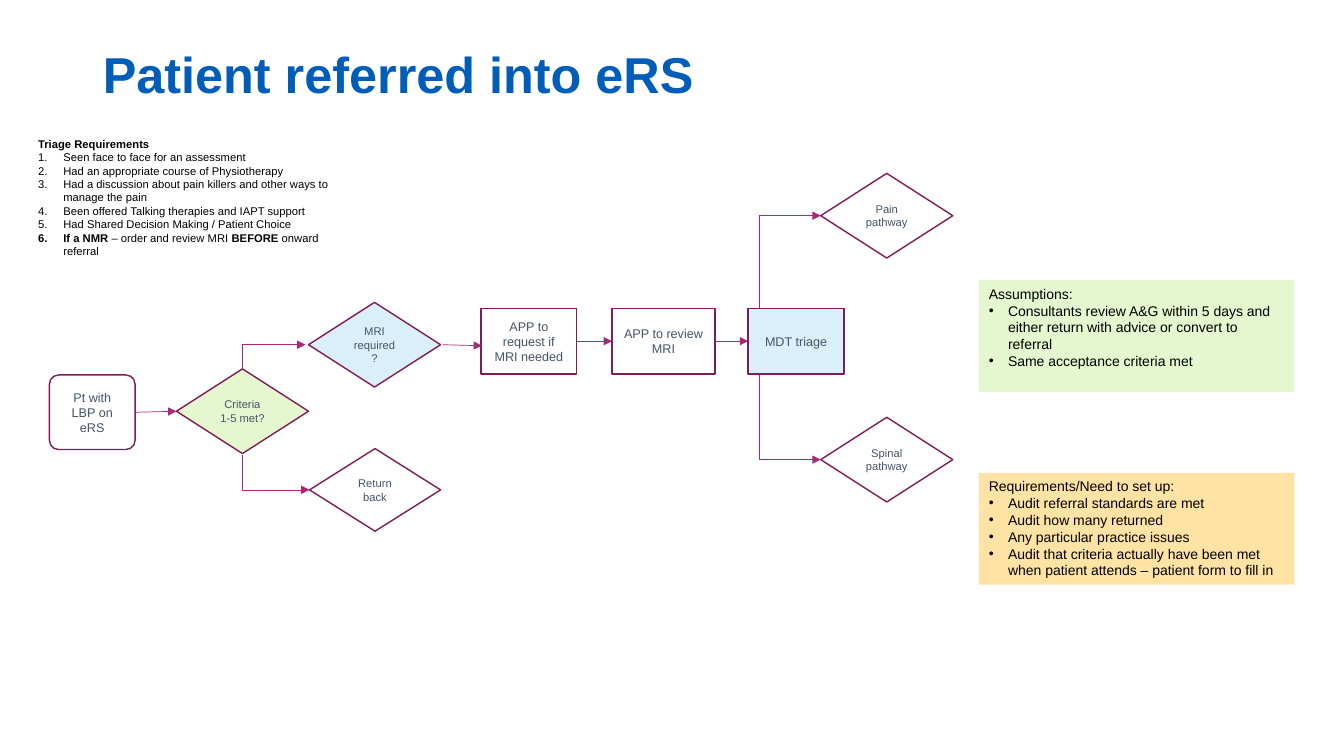
from lxml.etree import SubElement
from pptx import Presentation
from pptx.dml.color import RGBColor
from pptx.enum.shapes import MSO_CONNECTOR as Link, MSO_SHAPE as Form
from pptx.enum.text import MSO_ANCHOR as Anchor, MSO_AUTO_SIZE as Fit, PP_ALIGN as Align
from pptx.oxml.ns import qn
from pptx.util import Inches, Pt

BLUE, SLATE, BLACK = "005EB8", "44546A", "000000"
PLUM, PINK = "811B55", "AE2573"
GREEN, SKY, SAND = "E5F7CE", "D9F0FA", "FFE3A4"
TOP, LEFT, BOTTOM, RIGHT = range(4)


def color(code):
    return RGBColor.from_string(code)


class Flow:
    """Draws the parts of a flow chart on one slide."""

    font = "Arial"

    def __init__(self, slide):
        self.slide = slide
        self.shapes = slide.shapes

    def add_text(self, para, text, size, tint, bold=False):
        run = para.add_run()
        run.text = text
        run.font.name, run.font.size, run.font.bold = self.font, Pt(size), bold
        run.font.color.rgb = color(tint)

    def title(self, text, box):
        head = self.shapes.title
        head.left, head.top, head.width, head.height = map(Inches, box)
        frame = head.text_frame
        frame.auto_size, frame.vertical_anchor = Fit.NONE, Anchor.MIDDLE
        para = frame.paragraphs[0]
        para.alignment, para.line_spacing = Align.LEFT, 0.9
        self.add_text(para, text, 36, BLUE, True)

    def shape(self, form, box, fill=None, line=None):
        item = self.shapes.add_shape(form, *map(Inches, box))
        item.shadow.inherit = False
        if fill:
            item.fill.solid()
            item.fill.fore_color.rgb = color(fill)
        else:
            item.fill.background()
        if line:
            item.line.color.rgb, item.line.width = color(line), Pt(1)
        else:
            item.line.fill.background()
        item.text_frame.word_wrap = True
        return item

    def step(self, text, box, fill=None, form=Form.RECTANGLE, size=9):
        item = self.shape(form, box, fill, PLUM)
        item.text_frame.vertical_anchor = Anchor.MIDDLE
        para = item.text_frame.paragraphs[0]
        para.alignment = Align.CENTER
        self.add_text(para, text, size, SLATE)
        return item

    def choice(self, text, left, top, fill=None, width=1.31, height=0.84):
        box = left, top, width, height
        return self.step(text, box, fill, Form.FLOWCHART_DECISION, 8)

    def items(self, frame, head, rows, size, indent, mark, bold=False):
        """Add a heading and its list; each row holds (text, bold) runs."""
        frame.vertical_anchor = Anchor.TOP
        para = frame.paragraphs[0]
        para.alignment = Align.LEFT
        self.add_text(para, head, size, BLACK, bold)
        for runs in rows:
            para = frame.add_paragraph()
            para.alignment = Align.LEFT
            props = para._p.get_or_add_pPr()
            props.set("marL", str(Inches(indent)))
            props.set("indent", str(-Inches(indent)))
            SubElement(props, qn("a:buFont"), typeface=self.font)
            if mark == "1.":
                SubElement(props, qn("a:buAutoNum"), type="arabicPeriod")
            else:
                SubElement(props, qn("a:buChar"), char=mark)
            for text, heavy in runs:
                self.add_text(para, text, size, BLACK, heavy)

    def note(self, head, lines, top, fill):
        item = self.shape(Form.RECTANGLE, (9.71, top, 3.13, 1.11), fill)
        rows = [[(line, False)] for line in lines]
        self.items(item.text_frame, head, rows, 10, 0.19, "•")

    def arrow(self, start, end, kind=Link.STRAIGHT):
        link = self.shapes.add_connector(kind, *map(Inches, start + end))
        link.line.color.rgb, link.line.width = color(PINK), Pt(0.5)
        props = link._element.spPr
        SubElement(props.find(qn("a:ln")), qn("a:tailEnd"), type="triangle")
        SubElement(props, qn("a:effectLst"))
        return link

    def join(self, source, target):
        link = self.arrow((0, 0), (1, 0))
        link.begin_connect(source, RIGHT)
        link.end_connect(target, LEFT)

    def bend(self, start, end):
        """Draw an arrow that goes up or down first, then across."""
        link = self.arrow(start, end, Link.ELBOW)
        guides = link._element.spPr.find(qn("a:prstGeom")).get_or_add_avLst()
        SubElement(guides, qn("a:gd"), name="adj1", fmla="val 0")


def main():
    deck = Presentation()
    deck.slide_width, deck.slide_height = Inches(13.33), Inches(7.5)
    flow = Flow(deck.slides.add_slide(deck.slide_layouts[5]))
    flow.title("Patient referred into eRS", (0.92, 0.4, 8.89, 0.74))

    needs = flow.shapes.add_textbox(*map(Inches, (0.28, 1.31, 3.12, 1.45)))
    needs.text_frame.word_wrap = True
    plain = [
        "Seen face to face for an assessment",
        "Had an appropriate course of Physiotherapy",
        "Had a discussion about pain killers and other ways to manage the pain",
        "Been offered Talking therapies and IAPT support",
        "Had Shared Decision Making / Patient Choice",
    ]
    rows = [[(line, False)] for line in plain]
    rows.append([("If a NMR ", True), ("– order and review MRI ", False),
                 ("BEFORE ", True), ("onward referral", False)])
    flow.items(needs.text_frame, "Triage Requirements", rows, 8, 0.25, "1.", True)

    start = flow.step("Pt with LBP on eRS", (0.49, 3.72, 0.85, 0.74),
                      form=Form.ROUNDED_RECTANGLE)
    start.adjustments[0] = 0.124
    met = flow.choice("Criteria 1-5 met?", 1.75, 3.66, GREEN)
    flow.choice("MRI required?", 3.06, 3, SKY)
    flow.choice("Return back", 3.07, 4.45, width=1.3, height=0.82)
    flow.choice("Spinal pathway", 8.14, 4.14)
    flow.choice("Pain pathway", 8.14, 1.72)

    order = flow.step("APP to request if MRI needed", (4.77, 3.06, 0.95, 0.65))
    review = flow.step("APP to review MRI", (6.07, 3.06, 1.02, 0.65))
    triage = flow.step("MDT triage", (7.42, 3.06, 0.95, 0.65), SKY)

    for source, target in ((start, met), (order, review), (review, triage)):
        flow.join(source, target)
    flow.arrow((4.39, 3.42), (4.78, 3.43))
    flow.bend((2.4, 3.66), (3.03, 3.42))
    flow.bend((2.4, 4.51), (3.07, 4.86))
    flow.bend((7.53, 3.72), (8.14, 4.56))
    flow.bend((7.53, 3.06), (8.14, 2.14))

    flow.note("Assumptions:", [
        "Consultants review A&G within 5 days and either return with advice "
        "or convert to referral",
        "Same acceptance criteria met",
    ], 2.78, GREEN)
    flow.note("Requirements/Need to set up:", [
        "Audit referral standards are met",
        "Audit how many returned",
        "Any particular practice issues",
        "Audit that criteria actually have been met when patient attends "
        "– patient form to fill in",
    ], 4.69, SAND)
    deck.save("out.pptx")


if __name__ == "__main__":
    main()
